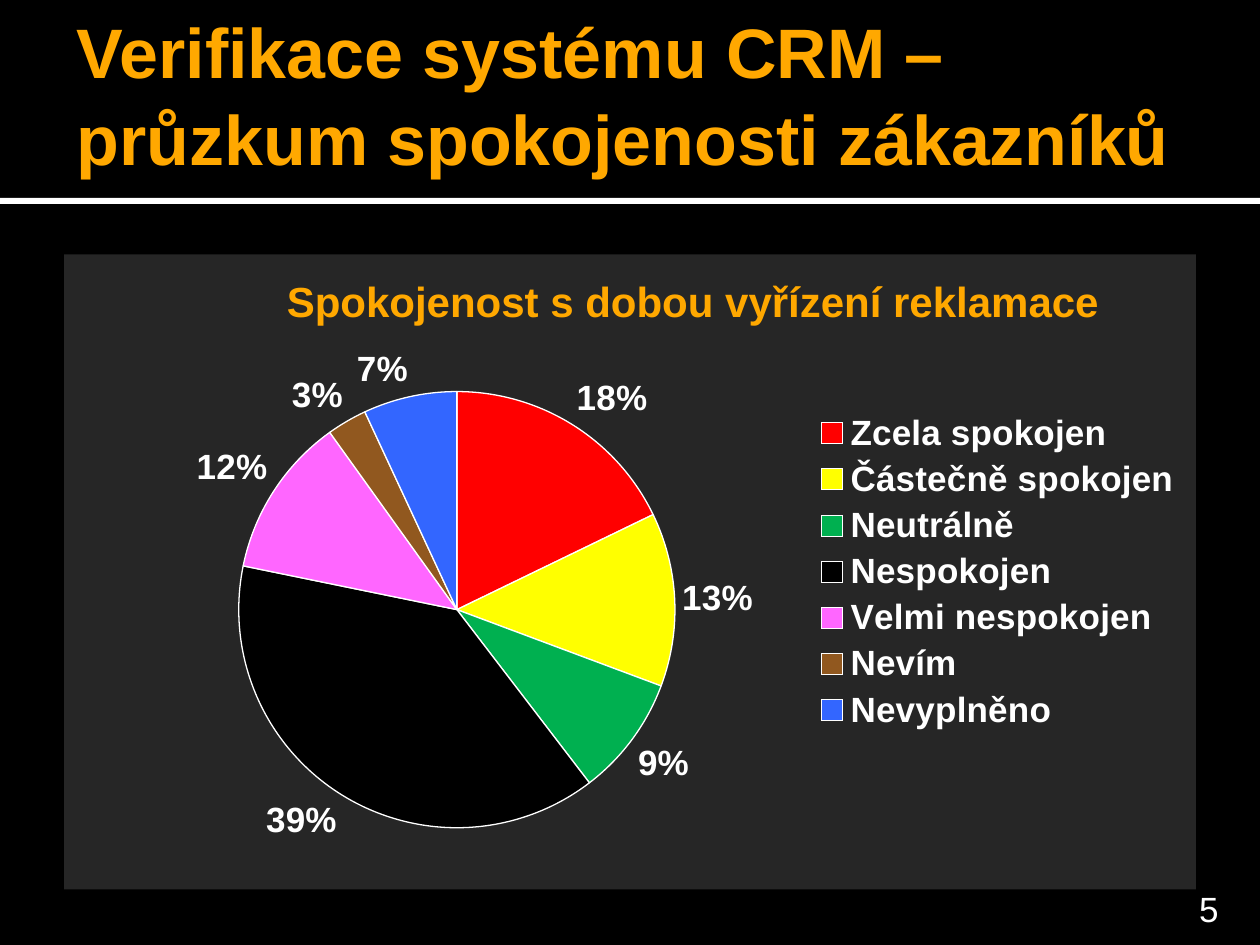
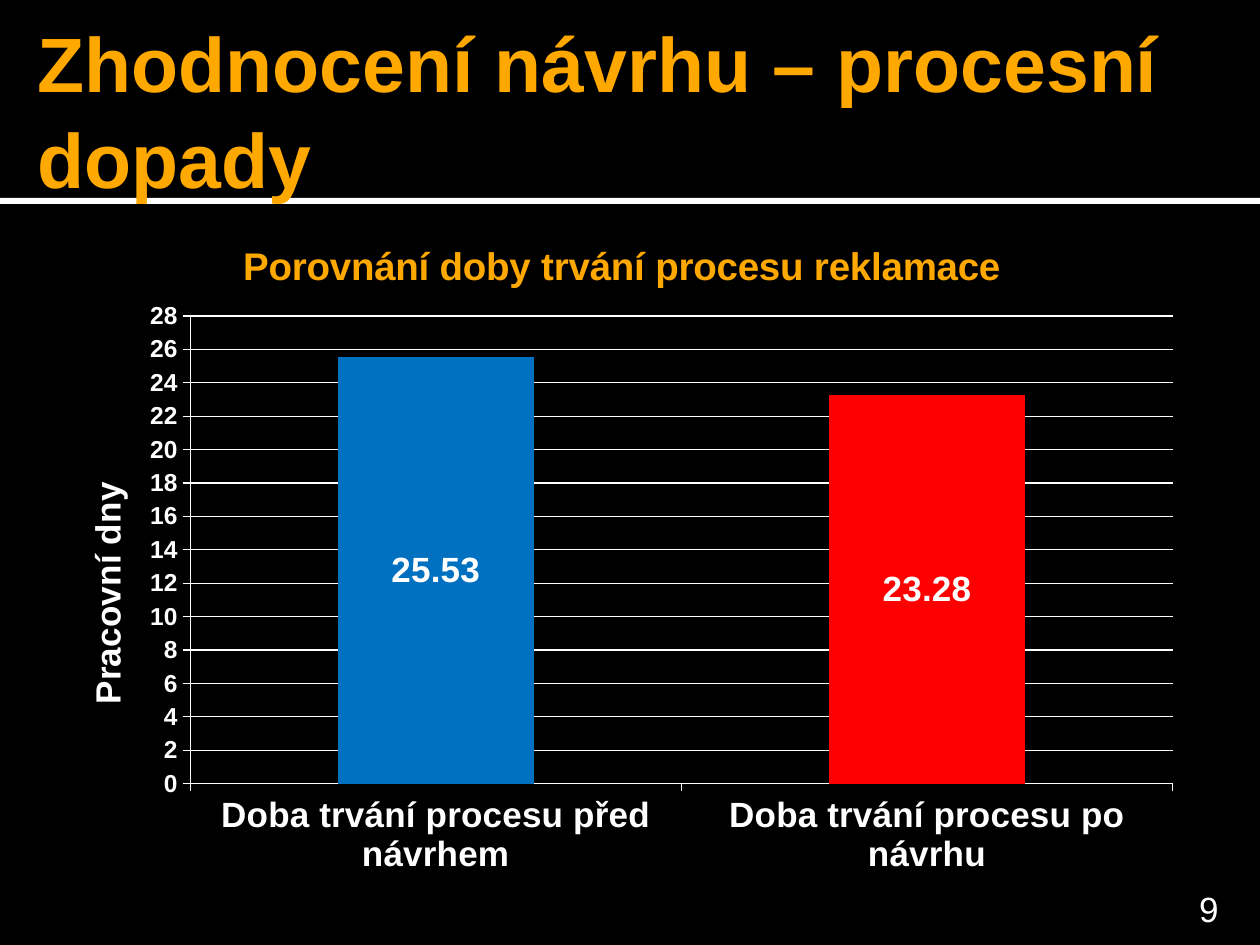
from pptx import Presentation
from pptx.chart.data import CategoryChartData
from pptx.dml.color import RGBColor
from pptx.enum import chart as ch, shapes, text
from pptx.oxml import parse_xml
from pptx.oxml.ns import nsdecls
from pptx.util import Pt

FONT = "Arial"
WHITE, BLACK, ORANGE, PANEL = "FFFFFF", "000000", "FFA800", "262626"
WIDTH, HEIGHT, HEADER = 720, 540, 113


def color(value):
    return RGBColor.from_string(value)


def style(font, size, value=WHITE, bold=True):
    font.name, font.size, font.bold = FONT, Pt(size), bold
    font.color.rgb = color(value)


def paint(fmt, value):
    fmt.fill.solid()
    fmt.fill.fore_color.rgb = color(value)


def outline(line, value=WHITE, width=0.75):
    line.color.rgb = color(value)
    line.width = Pt(width)


# Slide parts
def add_band(s, top, height, fill):
    sp = s.shapes.add_shape(shapes.MSO_SHAPE.RECTANGLE, 0, Pt(top), Pt(WIDTH), Pt(height))
    sp.shadow.inherit = False
    paint(sp, fill)
    sp.line.fill.background()
    s.shapes.title.element.addprevious(sp.element)


def add_title(s, words, box, size, inset):
    sp = s.shapes.title
    sp.left, sp.top, sp.width, sp.height = (Pt(v) for v in box)
    tf = sp.text_frame
    tf.text = words
    tf.word_wrap = True
    tf.auto_size = text.MSO_AUTO_SIZE.NONE
    tf.vertical_anchor = text.MSO_ANCHOR.MIDDLE
    tf.margin_left = Pt(inset)
    tf.margin_top = tf.margin_right = tf.margin_bottom = Pt(3.6)
    p = tf.paragraphs[0]
    p.alignment = text.PP_ALIGN.LEFT
    p.line_spacing = 1.04
    style(p.font, size, ORANGE)


def add_page_number(s, number):
    tf = s.shapes.add_textbox(Pt(645.8), Pt(509.8), Pt(57.6), Pt(21.6)).text_frame
    tf.word_wrap = True
    tf.vertical_anchor = text.MSO_ANCHOR.BOTTOM
    tf.margin_bottom = 0
    p = tf.paragraphs[0]
    p.text = str(number)
    p.alignment = text.PP_ALIGN.RIGHT
    style(p.font, 20, bold=False)


def new_slide(prs, title, box, size, inset, number):
    s = prs.slides.add_slide(prs.slide_layouts[5])
    add_band(s, HEADER, 3.6, WHITE)
    add_band(s, 0, HEADER, BLACK)
    add_title(s, title, box, size, inset)
    add_page_number(s, number)
    return s


# Chart parts
def place(chart, part, x, y, w=None, h=None):
    """Set the manual layout of a chart part, in fractions of the chart."""
    el = chart.element.xpath(part)[0]
    for old in el.xpath("c:layout"):
        el.remove(old)
    target = '<c:layoutTarget val="inner"/>' if part.endswith("plotArea") else ""
    modes = '<c:xMode val="edge"/><c:yMode val="edge"/>'
    values = "".join(f'<c:{k} val="{v}"/>' for k, v in zip("xywh", (x, y, w, h)) if v is not None)
    layout = parse_xml(f'<c:layout {nsdecls("c")}><c:manualLayout>{target}{modes}{values}'
                       "</c:manualLayout></c:layout>")
    before = el.xpath("c:tx | c:legendPos")
    if before:
        before[0].addnext(layout)
    else:
        el.insert(0, layout)


def set_chart_background(chart, fill=None):
    body = f'<a:solidFill><a:srgbClr val="{fill}"/></a:solidFill>' if fill else "<a:noFill/>"
    chart.element.xpath("c:chart")[0].addnext(parse_xml(
        f'<c:spPr {nsdecls("c", "a")}>{body}<a:ln><a:noFill/></a:ln></c:spPr>'))


def set_heading(titled, words, size, value):
    tf = titled.text_frame
    tf.text = words
    style(tf.paragraphs[0].font, size, value)


def add_chart(s, kind, box, cats, values, heading, size, fill=None):
    data = CategoryChartData()
    data.categories = cats
    data.add_series("Series 1", values)
    chart = s.shapes.add_chart(kind, *(Pt(v) for v in box), data).chart
    style(chart.font, 20)
    set_chart_background(chart, fill)
    chart.has_title = True
    set_heading(chart.chart_title, heading, size, ORANGE)
    chart.has_legend = False
    return chart


def color_points(series, colors):
    for i, value in enumerate(colors):
        paint(series.points[i].format, value)


def add_labels(plot, position, number_format):
    plot.has_data_labels = True
    labels = plot.data_labels
    labels.position = position
    labels.number_format = number_format
    labels.number_format_is_linked = False
    style(labels.font, 20)
    return labels


def add_satisfaction_pie(s):
    answers = [("Zcela spokojen", 18, "FF0000"), ("Částečně spokojen", 13, "FFFF00"),
               ("Neutrálně", 9, "00B050"), ("Nespokojen", 39, BLACK),
               ("Velmi nespokojen", 12, "FF66FF"), ("Nevím", 3, "91581F"),
               ("Nevyplněno", 7, "3366FF")]
    cats, values, colors = zip(*answers)
    chart = add_chart(s, ch.XL_CHART_TYPE.PIE, (36.7, 145.4, 646.6, 362.9), cats, values,
                      "Spokojenost s dobou vyřízení reklamace", 24, PANEL)
    plot = chart.plots[0]
    series = plot.series[0]
    color_points(series, colors)
    for i in range(len(answers)):
        outline(series.points[i].format.line)
    labels = add_labels(plot, ch.XL_LABEL_POSITION.OUTSIDE_END, "0%")
    labels.show_percentage = True
    labels.show_value = False

    chart.has_legend = True
    chart.legend.position = ch.XL_LEGEND_POSITION.RIGHT
    chart.legend.include_in_layout = False
    style(chart.legend.font, 20)
    place(chart, "c:chart/c:title", 0.19, 0.02)
    place(chart, "c:chart/c:plotArea", 0.154, 0.216, 0.386, 0.687)
    place(chart, "c:chart/c:legend", 0.66, 0.24, 0.33, 0.52)


def add_duration_columns(s):
    cats = ["Doba trvání procesu před návrhem", "Doba trvání procesu po návrhu"]
    chart = add_chart(s, ch.XL_CHART_TYPE.COLUMN_CLUSTERED, (25.2, 122.4, 657.4, 385.2),
                      cats, [25.53, 23.28], "Porovnání doby trvání procesu reklamace", 22)
    plot = chart.plots[0]
    plot.gap_width = 150
    plot.vary_by_categories = False
    color_points(plot.series[0], ["0070C0", "FF0000"])
    add_labels(plot, ch.XL_LABEL_POSITION.CENTER, "0.00").show_value = True

    days = chart.value_axis
    for axis, size in ((chart.category_axis, 20), (days, 14)):
        style(axis.tick_labels.font, size)
        outline(axis.format.line)
        axis.major_tick_mark = ch.XL_TICK_MARK.OUTSIDE
    days.minimum_scale, days.maximum_scale, days.major_unit = 0, 28, 2
    days.has_major_gridlines = True
    outline(days.major_gridlines.format.line)
    days.has_title = True
    set_heading(days.axis_title, "Pracovní dny", 20, WHITE)
    place(chart, "c:chart/c:title", 0.167, 0.03)
    place(chart, "c:chart/c:plotArea", 0.127, 0.151, 0.854, 0.694)
    place(chart, "c:chart/c:plotArea/c:valAx/c:title", 0.03, 0.388)


def main():
    prs = Presentation()
    prs.slide_width, prs.slide_height = Pt(WIDTH), Pt(HEIGHT)
    background = prs.slide_master.background.fill
    background.solid()
    background.fore_color.rgb = color(BLACK)

    s = new_slide(prs, "Verifikace systému CRM – průzkum spokojenosti zákazníků",
                  (36.7, 0, 663.1, 105.8), 40, 7.2, 5)
    add_satisfaction_pie(s)

    s = new_slide(prs, "Zhodnocení návrhu – procesní dopady",
                  (0, 12.2, WIDTH, 98.6), 44, 21.6, 9)
    add_duration_columns(s)
    prs.save("out.pptx")


if __name__ == "__main__":
    main()
